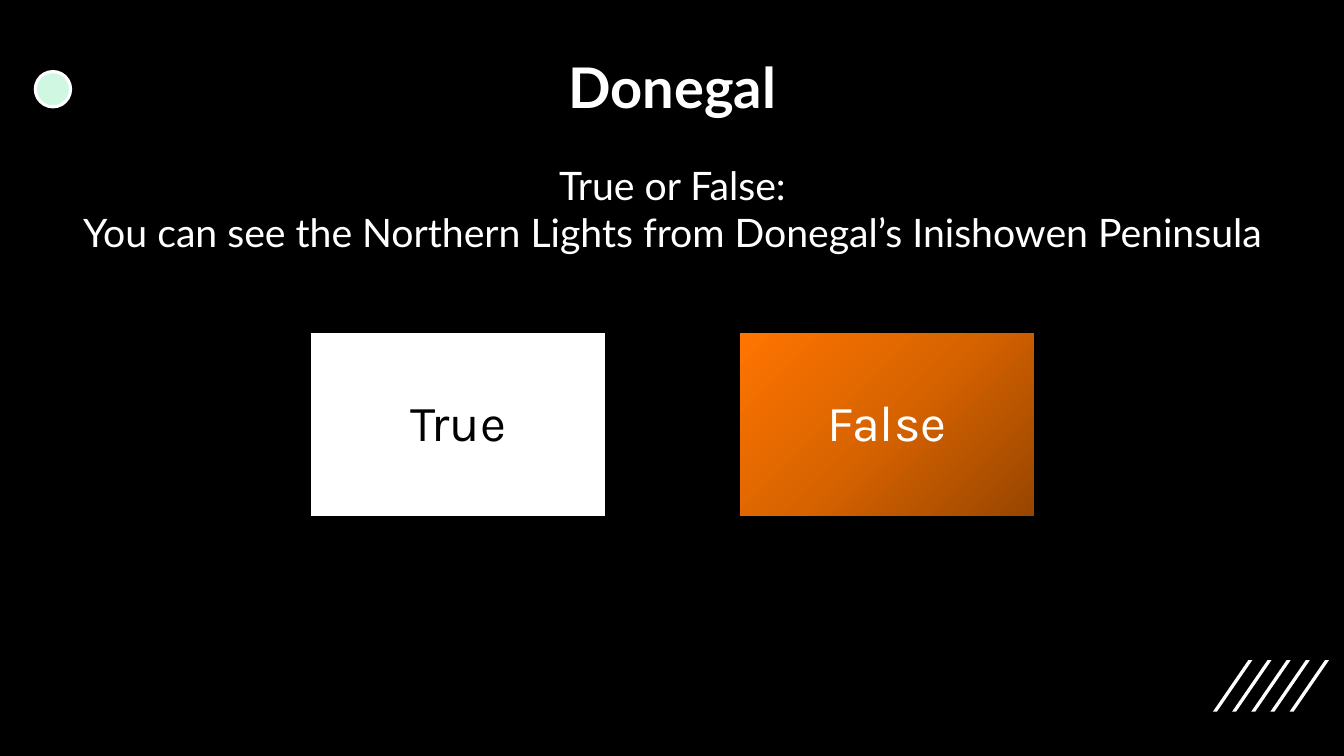
import pptx
import pptx.dml.color
import pptx.enum.shapes
import pptx.enum.text
import pptx.oxml
import pptx.oxml.ns
import pptx.util

Inches = pptx.util.Inches
Pt = pptx.util.Pt
RGBColor = pptx.dml.color.RGBColor
Shape = pptx.enum.shapes.MSO_SHAPE

BLACK = RGBColor(0x00, 0x00, 0x00)
WHITE = RGBColor(0xFF, 0xFF, 0xFF)
MINT = RGBColor(0xCF, 0xF7, 0xE1)
DARK_ORANGE = RGBColor(0x97, 0x45, 0x00)
MID_ORANGE = RGBColor(0xD7, 0x63, 0x00)
ORANGE = RGBColor(0xFF, 0x75, 0x00)


class QuizPage:
    heading_font = "Lato"
    answer_font = "Karla"

    def __init__(self, deck):
        self.page = deck.slides.add_slide(deck.slide_layouts[6])
        self.page.background.fill.solid()
        self.page.background.fill.fore_color.rgb = BLACK

    def set_text(self, frame, lines, font, size, color, bold=False):
        frame.word_wrap = True
        frame.text = "\n".join(lines)
        for para in frame.paragraphs:
            para.alignment = pptx.enum.text.PP_ALIGN.CENTER
            for span in para.runs:
                span.font.name = font
                span.font.size = Pt(size)
                span.font.bold = bold
                span.font.color.rgb = color

    def text(self, left, top, width, height, lines, size, bold=False):
        box = self.page.shapes.add_textbox(
            Inches(left), Inches(top), Inches(width), Inches(height))
        self.set_text(box.text_frame, lines, self.heading_font, size, WHITE, bold)

    def shape(self, kind, left, top, width, height, fill, line, line_width):
        shape = self.page.shapes.add_shape(
            kind, Inches(left), Inches(top), Inches(width), Inches(height))
        shape.shadow.inherit = False
        shape.fill.solid()
        shape.fill.fore_color.rgb = fill
        shape.line.color.rgb = line
        shape.line.width = Pt(line_width)
        return shape

    def slash(self, left, top, width, height, thickness):
        right, bottom = left + width, top + height
        corners = [(left, bottom), (right - thickness, top), (right, top)]
        outline = self.page.shapes.build_freeform(
            Inches(left + thickness), Inches(bottom))
        outline.add_line_segments([(Inches(x), Inches(y)) for x, y in corners])
        slash = outline.convert_to_shape()
        slash.shadow.inherit = False
        slash.fill.solid()
        slash.fill.fore_color.rgb = WHITE
        slash.line.fill.background()

    def answer(self, left, label, fill, color):
        card = self.shape(Shape.RECTANGLE, left, 3.3, 2.93, 1.83, fill, BLACK, 1)
        frame = card.text_frame
        frame.margin_left = frame.margin_right = Inches(0.23)
        frame.margin_top = frame.margin_bottom = Inches(0.23)
        frame.vertical_anchor = pptx.enum.text.MSO_ANCHOR.MIDDLE
        self.set_text(frame, [label], self.answer_font, 36, color)
        frame.paragraphs[0].line_spacing = 0.9
        return card

    def radial_gradient(self, shape, colors):
        """Spread the colours evenly outwards from the bottom right corner."""
        step = 100000 // (len(colors) - 1)
        stops = "".join(
            f'<a:gs pos="{index * step}"><a:srgbClr val="{color}"/></a:gs>'
            for index, color in enumerate(colors))
        gradient = pptx.oxml.parse_xml(
            f'<a:gradFill {pptx.oxml.ns.nsdecls("a")} rotWithShape="1">'
            f'<a:gsLst>{stops}</a:gsLst><a:path path="circle">'
            '<a:fillToRect l="100000" t="100000"/></a:path></a:gradFill>')
        properties = shape.element.spPr
        solid = properties.find(pptx.oxml.ns.qn("a:solidFill"))
        properties.replace(solid, gradient)


def main():
    deck = pptx.Presentation()
    deck.slide_width = Inches(13.33)
    deck.slide_height = Inches(7.5)
    quiz = QuizPage(deck)

    # Corner decorations
    for index in range(5):
        quiz.slash(12.03 + index * 0.19, 6.55, 0.39, 0.51, 0.04)
    quiz.shape(Shape.OVAL, 0.35, 0.71, 0.35, 0.35, MINT, WHITE, 2.25)

    # Title and question
    quiz.text(3.74, 0.47, 5.86, 0.77, ["Donegal"], 40, bold=True)
    quiz.text(0.09, 1.55, 13.16, 1.04, [
        "True or False:",
        "You can see the Northern Lights from Donegal’s Inishowen Peninsula",
    ], 28)

    # Answer cards
    quiz.answer(3.08, "True", WHITE, BLACK)
    false_card = quiz.answer(7.33, "False", ORANGE, WHITE)
    quiz.radial_gradient(false_card, [DARK_ORANGE, MID_ORANGE, ORANGE])

    deck.save("out.pptx")


if __name__ == "__main__":
    main()
